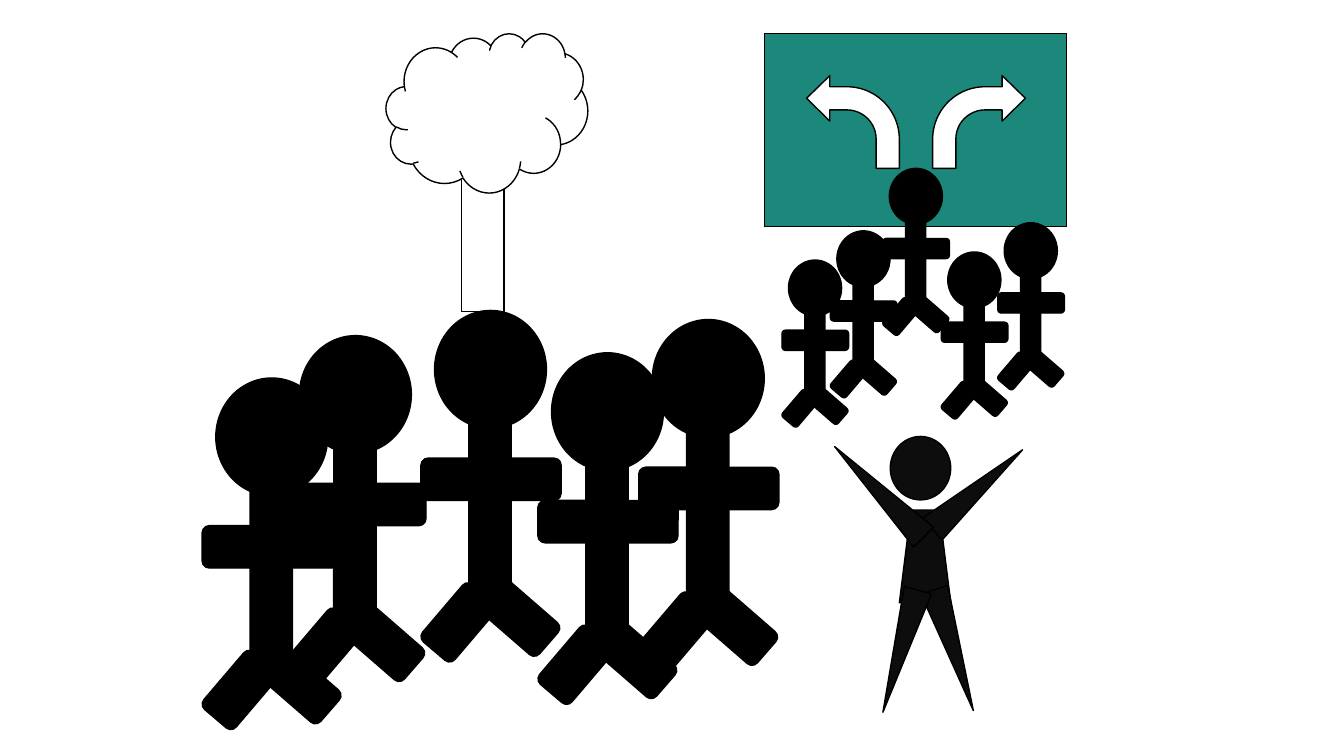
from pptx import Presentation
from pptx.dml.color import RGBColor as RGB
from pptx.enum.shapes import MSO_SHAPE as Kind
from pptx.util import Inches, Pt

COLORS = {"black": "000000", "ink": "0D0D0D", "white": "FFFFFF", "teal": "1C887B"}

# Parts of one person, measured from the corner of the head
PERSON = [
    (Kind.OVAL, (0, 0, 1.11, 1.17), 0),
    (Kind.ROUNDED_RECTANGLE, (0.03, 2.72, 0.42, 0.75), 40.4),
    (Kind.ROUNDED_RECTANGLE, (0.34, 1, 0.42, 2), 0),
    (Kind.ROUNDED_RECTANGLE, (0.64, 2.68, 0.42, 0.75), 311),
    (Kind.ROUNDED_RECTANGLE, (0.35, 0.98, 0.42, 1.39), 90),
]
CROWD = [(2.97, 3.33), (4.31, 3.08), (5.47, 3.5), (6.47, 3.17), (2.14, 3.75)]
TEAM = [(8.3, 2.29), (8.82, 1.67), (9.4, 2.5), (9.96, 2.21), (7.82, 2.58)]
LIMBS = [
    ((9.55, 4.26, 0.29, 1.19), 48.7),
    ((8.58, 4.25, 0.28, 1.26), 315.5),
    ((9.32, 5.82, 0.28, 1.26), 162.1),
    ((8.79, 5.83, 0.28, 1.26), 196),
]


def add_part(group, kind, box, fill=None, turn=0, adjust=()):
    part = group.shapes.add_shape(kind, *map(Inches, box))
    part.shadow.inherit = False
    part.rotation = turn
    for i, value in enumerate(adjust):
        part.adjustments[i] = value
    if fill:
        part.fill.solid()
        part.fill.fore_color.rgb = RGB.from_string(COLORS[fill])
    else:
        part.fill.background()
    part.line.color.rgb = RGB.from_string(COLORS["black"])
    part.line.width = Pt(1)
    return part


def add_people(group, spots, scale=1):
    for left, top in spots:
        for kind, (x, y, wide, high), turn in PERSON:
            box = (left + x * scale, top + y * scale, wide * scale, high * scale)
            add_part(group, kind, box, "black", turn)


def add_tree(group):
    add_part(group, Kind.RECTANGLE, (4.58, 1.17, 0.42, 1.92))
    add_part(group, Kind.CLOUD, (3.83, 0.33, 2, 1.58), "white")


def add_sign(group):
    add_part(group, Kind.RECTANGLE, (7.58, 0.33, 3, 1.92), "teal")
    for left, flip in ((9.25, False), (8, True)):
        arrow = add_part(group, Kind.BENT_ARROW, (left, 0.75, 0.92, 0.92),
                         "white", adjust=(0.25, 0.245, 0.25, 0.566))
        if flip:
            arrow._element.spPr.xfrm.set("flipH", "1")


def add_cheerer(group):
    add_part(group, Kind.OVAL, (8.83, 4.33, 0.6, 0.63), "ink")
    add_part(group, Kind.TRAPEZOID, (8.92, 5.06, 0.51, 0.92), "ink", adjust=(0.226,))
    for box, turn in LIMBS:
        add_part(group, Kind.ISOSCELES_TRIANGLE, box, "ink", turn)


def main():
    deck = Presentation()
    deck.slide_width, deck.slide_height = Inches(13.33), Inches(7.5)
    slide = deck.slides.add_slide(deck.slide_layouts[6])
    tree, crowd, team, cheer = (slide.shapes.add_group_shape() for _ in range(4))
    add_tree(tree)
    add_people(crowd, CROWD)
    add_sign(team)
    add_people(team, TEAM, 0.475)
    add_cheerer(cheer)
    deck.save("out.pptx")


if __name__ == "__main__":
    main()
